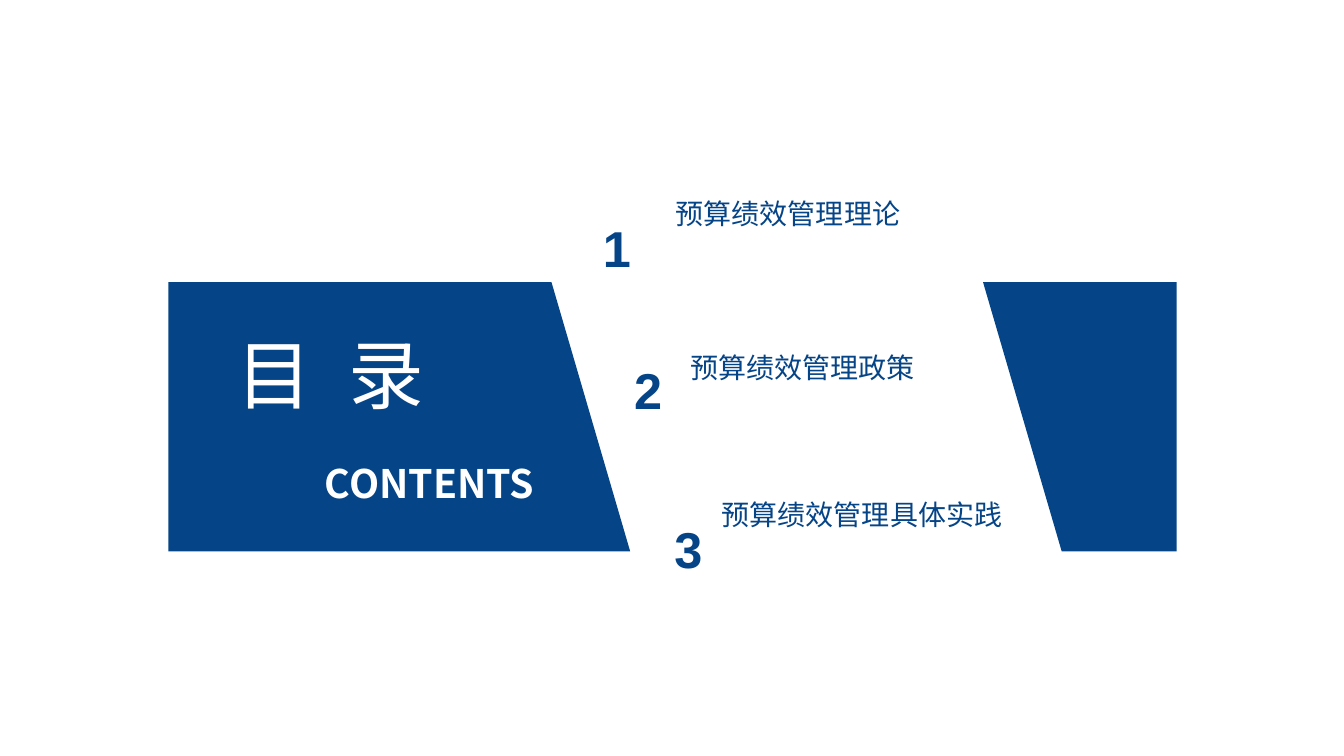
from dataclasses import dataclass
from lxml import etree
from pptx import Presentation
from pptx.dml.color import RGBColor
from pptx.enum.text import MSO_ANCHOR, PP_ALIGN
from pptx.oxml.ns import qn
from pptx.util import Inches, Pt

LEFT, CENTER = PP_ALIGN.LEFT, PP_ALIGN.CENTER
TOP, MIDDLE = MSO_ANCHOR.TOP, MSO_ANCHOR.MIDDLE


@dataclass(frozen=True)
class Theme:
    blue: RGBColor = RGBColor(0x05, 0x44, 0x87)
    white: RGBColor = RGBColor(0xFF, 0xFF, 0xFF)
    body_font: str = "Noto Sans CJK SC"
    number_font: str = "Arial"
    title_size: int = 54
    subtitle_size: int = 28
    number_size: int = 36
    entry_size: int = 20


theme = Theme()

presentation = Presentation()
presentation.slide_width = Inches(13.33)
presentation.slide_height = Inches(7.5)
slide = presentation.slides.add_slide(presentation.slide_layouts[6])


def add_text(text, *, box, size, color=theme.blue, font=theme.body_font, bold=False,
             align=LEFT, anchor=TOP, wrap=False, line_spacing=None, tracking=None):
    shape = slide.shapes.add_textbox(*[Inches(length) for length in box])
    frame = shape.text_frame
    frame.word_wrap = wrap
    frame.vertical_anchor = anchor
    paragraph = frame.paragraphs[0]
    paragraph.alignment = align
    paragraph.line_spacing = line_spacing
    run = paragraph.add_run()
    run.text = text
    run.font.name = font
    run.font.size = Pt(size)
    run.font.bold = bold
    run.font.color.rgb = color
    properties = run.font._element
    etree.SubElement(properties, qn("a:ea")).set("typeface", font)
    if tracking:
        properties.set("spc", str(tracking * 100))


band_top, band_bottom = 2.8, 5.47
panels = [
    [(9.75, band_top), (11.67, band_top), (11.67, band_bottom), (10.53, band_bottom)],
    [(1.67, band_top), (5.47, band_top), (6.25, band_bottom), (1.67, band_bottom)],
]
for corners in panels:
    points = [(Inches(x), Inches(y)) for x, y in corners]
    builder = slide.shapes.build_freeform(*points[0])
    builder.add_line_segments(points[1:], close=True)
    panel = builder.convert_to_shape()
    panel.shadow.inherit = False
    panel.fill.solid()
    panel.fill.fore_color.rgb = theme.blue
    panel.line.fill.background()

add_text("目 录", box=(2.18, 3.12, 2.2, 1.16), size=theme.title_size, color=theme.white,
         align=CENTER, anchor=MIDDLE, tracking=7)
add_text("CONTENTS", box=(3.04, 4.48, 2.44, 0.61), size=theme.subtitle_size,
         color=theme.white, bold=True, align=CENTER, anchor=MIDDLE)

entries = [
    ("预算绩效管理理论", (5.88, 2.1, 0.25, 0.67), (6.19, 1.9, 3.25, 0.46), CENTER, None),
    ("预算绩效管理政策", (6.19, 3.51, 0.33, 0.67), (6.75, 3.36, 3.25, 0.5), LEFT, 1.2),
    ("预算绩效管理具体实践", (6.59, 5.09, 0.31, 0.61), (7.06, 4.82, 3.25, 0.5), LEFT, 1.2),
]
for number, (entry, number_box, entry_box, align, line_spacing) in enumerate(entries, 1):
    add_text(str(number), box=number_box, size=theme.number_size,
             font=theme.number_font, bold=True)
    add_text(entry, box=entry_box, size=theme.entry_size, align=align,
             wrap=True, line_spacing=line_spacing)

presentation.save("out.pptx")
